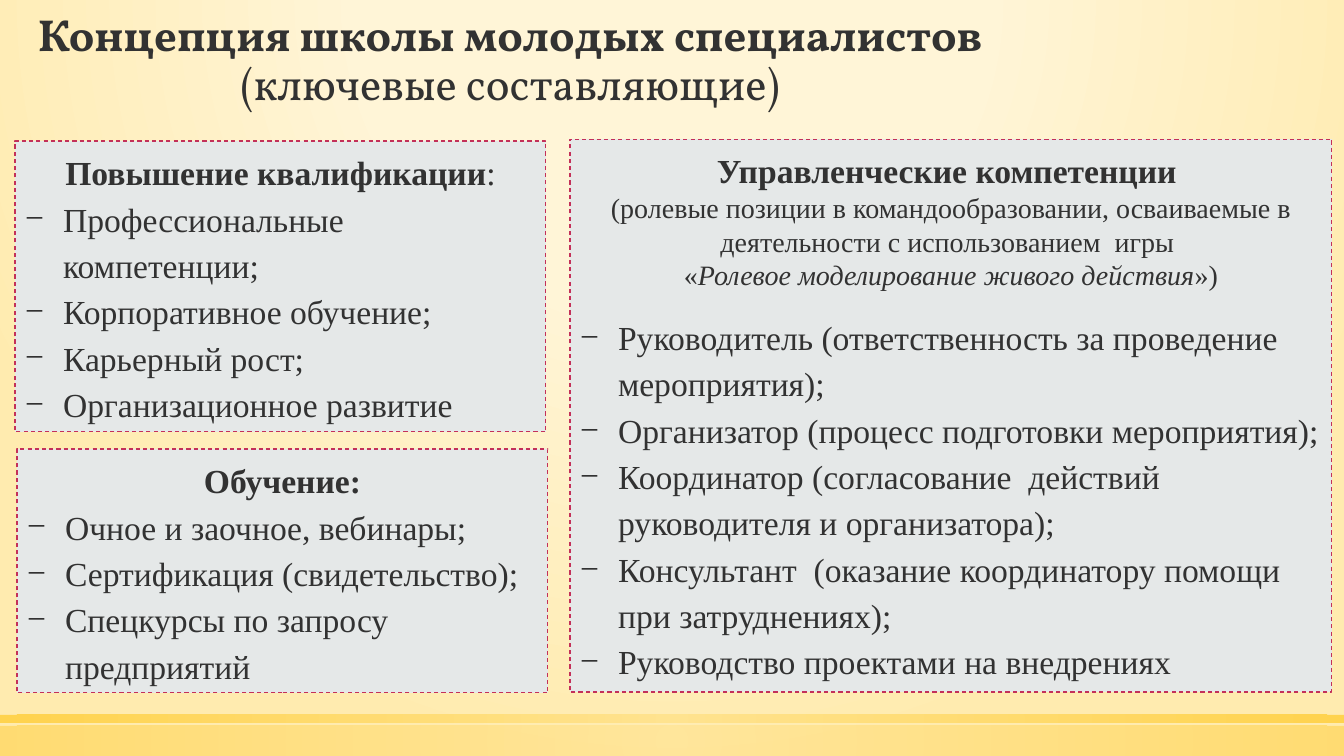
from dataclasses import dataclass

from lxml import etree
from pptx import Presentation
from pptx.dml.color import RGBColor
from pptx.enum.dml import MSO_LINE_DASH_STYLE as Dash
from pptx.enum.shapes import MSO_SHAPE as Shape
from pptx.enum.text import MSO_ANCHOR as Anchor, MSO_AUTO_SIZE as AutoSize, PP_ALIGN as Align
from pptx.oxml import parse_xml
from pptx.oxml.ns import nsdecls, qn
from pptx.util import Pt

PX = 914400 / 100.8


@dataclass(frozen=True)
class Theme:
    """Colours, fonts and type sizes of the slide."""
    ink: str = "323232"
    panel: str = "E5E8E8"
    border: str = "C33059"
    page: tuple = ((0, "FFF5D7", 59), (40, "FFF5D7", 66), (100, "FFEBAF", 100))
    bar: tuple = (("FFE186", 0), ("FFCD36", 100))
    title_font: str = "Vollkorn"
    body_font: str = "Times New Roman"
    title: int = 32
    body: int = 24
    note: int = 20


def px(n):
    """Turn pixels into EMU."""
    return round(n * PX)


def add_run(p, text, font, size, color, bold=False, italic=False):
    """Add one formatted run to a paragraph."""
    r = p.add_run()
    r.text = text
    f = r.font
    f.name, f.size, f.bold, f.italic = font, Pt(size), bold, italic
    f.color.rgb = RGBColor.from_string(color)


def radial(stops, top=50, bottom=50):
    """Build a circular gradient from (position, colour, opacity) stops."""
    gs = "".join(
        f'<a:gs pos="{pos * 1000}"><a:srgbClr val="{color}">'
        f'<a:alpha val="{alpha * 1000}"/></a:srgbClr></a:gs>'
        for pos, color, alpha in stops)
    return parse_xml(
        f'<a:gradFill {nsdecls("a")} rotWithShape="1"><a:gsLst>{gs}</a:gsLst>'
        f'<a:path path="circle"><a:fillToRect l="50000" t="{top * 1000}" '
        f'r="50000" b="{bottom * 1000}"/></a:path></a:gradFill>')


class Deck:
    """Holds the theme and the current slide."""

    def __init__(self, theme):
        """Start a wide presentation with one slide."""
        self.t = theme
        self.prs = Presentation()
        self.prs.slide_width, self.prs.slide_height = px(1344), px(756)
        self.s = self.prs.slides.add_slide(self.prs.slide_layouts[4])

    def paint(self, owner, fill, gradient):
        """Give a fill owner a gradient."""
        fill.solid()
        old = next(owner.iter(qn("a:solidFill")))
        old.getparent().replace(old, gradient)

    def background(self):
        """Paint the page."""
        self.paint(self.s.element, self.s.background.fill, radial(self.t.page, -80, 180))

    def bar(self, y, h, alpha):
        """Add a full-width gradient bar."""
        sp = self.s.shapes.add_shape(Shape.RECTANGLE, 0, px(y), px(1344), px(h))
        sp.shadow.inherit = False
        sp.line.fill.background()
        stops = [(pos, color, alpha) for color, pos in self.t.bar]
        self.paint(sp.element.spPr, sp.fill, radial(stops))

    def place(self, idx, x, y, w, h, anchor):
        """Move a placeholder and return it with its text frame."""
        sp = self.s.placeholders[idx]
        sp.left, sp.top, sp.width, sp.height = map(px, (x, y, w, h))
        tf = sp.text_frame
        tf.word_wrap, tf.auto_size, tf.vertical_anchor = True, AutoSize.NONE, anchor
        return sp, tf

    def title(self, main, sub):
        """Fill the title with a bold part and a plain part."""
        _, tf = self.place(0, 17, 2, 987, 119, Anchor.MIDDLE)
        p = tf.paragraphs[0]
        p.alignment, p.line_spacing = Align.CENTER, 0.9
        for text, bold in ((main, True), (sub, False)):
            add_run(p, text, self.t.title_font, self.t.title, self.t.ink, bold=bold)

    def para(self, tf, runs, size, bullet=False, spacing=1.15, before=0):
        """Add a centred line or a dashed list item."""
        p = tf.paragraphs[0] if not tf.text else tf.add_paragraph()
        p.alignment = Align.LEFT if bullet else Align.CENTER
        p.line_spacing, p.space_before, p.space_after = spacing, Pt(before), Pt(0)
        pPr = p._p.get_or_add_pPr()
        indent = px(38) if bullet else 0
        pPr.set("marL", str(indent))
        pPr.set("indent", str(-indent))
        if bullet:
            etree.SubElement(pPr, qn("a:buFont")).set("typeface", self.t.body_font)
            etree.SubElement(pPr, qn("a:buChar")).set("char", "−")
        else:
            etree.SubElement(pPr, qn("a:buNone"))
        for text, style in runs:
            add_run(p, text, self.t.body_font, size, self.t.ink, **style)

    def panel(self, idx, box, heading, items, notes=(), gap=0):
        """Fill a dashed panel with a heading, notes and a list."""
        sp, tf = self.place(idx, *box, Anchor.TOP)
        sp.fill.solid()
        sp.fill.fore_color.rgb = RGBColor.from_string(self.t.panel)
        sp.line.color.rgb = RGBColor.from_string(self.t.border)
        sp.line.width, sp.line.dash_style = Pt(0.75), Dash.DASH
        self.para(tf, heading, self.t.body)
        for runs in notes:
            self.para(tf, runs, self.t.note, spacing=1.0)
        for i, item in enumerate(items):
            self.para(tf, [(item, {})], self.t.body, bullet=True, before=0 if i else gap)

    def save(self):
        """Drop unused placeholders and save."""
        for sp in list(self.s.placeholders):
            if not sp.text_frame.text:
                sp.element.getparent().remove(sp.element)
        self.prs.save("out.pptx")


def main():
    """Build the slide."""
    deck = Deck(Theme())
    bold, italic = {"bold": True}, {"italic": True}
    deck.background()
    deck.bar(726, 30, 50)
    deck.bar(715, 8, 80)
    deck.title("Концепция школы молодых специалистов ", "(ключевые составляющие)")
    deck.panel(1, (15, 141, 531, 291), [("Повышение квалификации", bold), (":", {})], [
        "Профессиональные компетенции;",
        "Корпоративное обучение;",
        "Карьерный рост;",
        "Организационное развитие",
    ])
    deck.panel(2, (17, 449, 531, 244), [("Обучение:", bold)], [
        "Очное и заочное, вебинары;",
        "Сертификация (свидетельство);",
        "Спецкурсы по запросу предприятий",
    ])
    deck.panel(3, (570, 139, 762, 553), [("Управленческие компетенции ", bold)], [
        "Руководитель (ответственность за проведение мероприятия);",
        "Организатор (процесс подготовки мероприятия);",
        "Координатор (согласование  действий руководителя и организатора);",
        "Консультант  (оказание координатору помощи при затруднениях);",
        "Руководство проектами на внедрениях",
    ], notes=[
        [("(ролевые позиции в командообразовании, осваиваемые в "
          "деятельности с использованием  игры ", {})],
        [("«", {}), ("Ролевое моделирование живого действия", italic), ("»)", {})],
    ], gap=14)
    deck.save()


if __name__ == "__main__":
    main()
